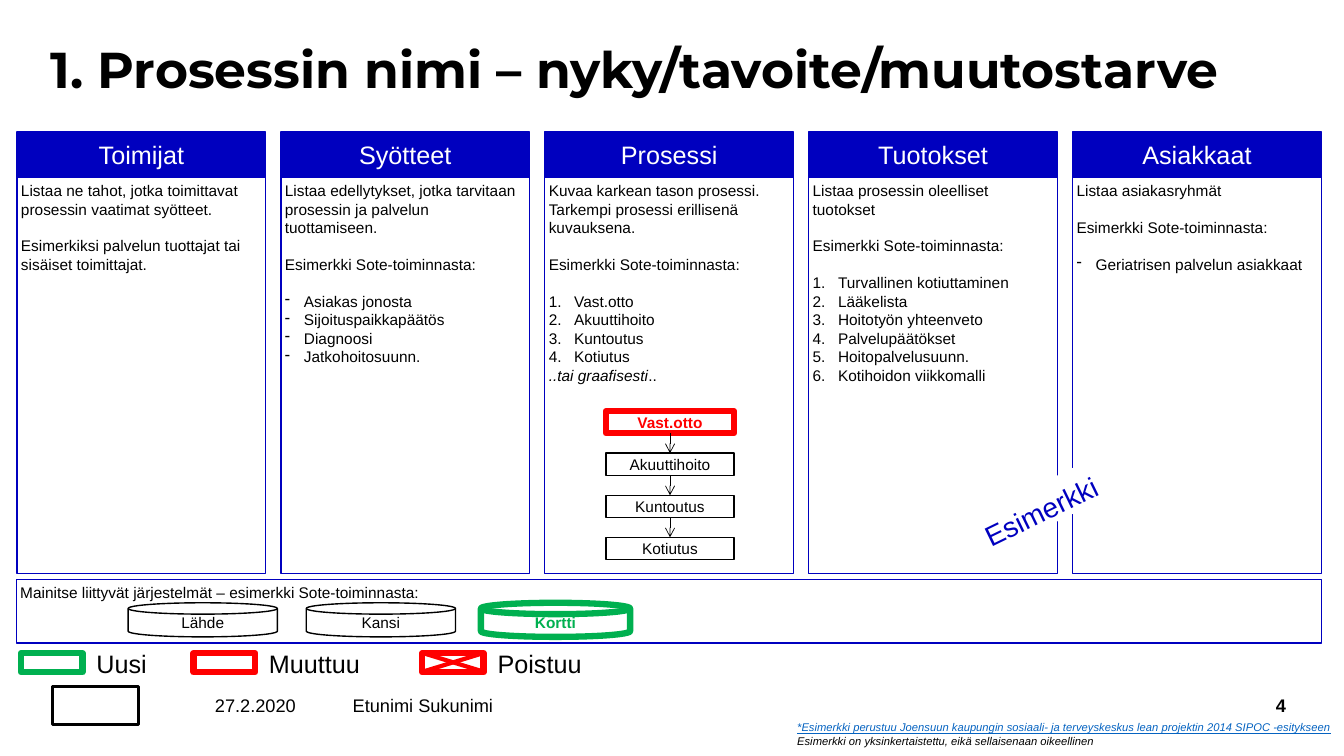
"""Build the SIPOC process description slide."""
from lxml import etree
from pptx import Presentation
from pptx.dml.color import RGBColor
from pptx.enum.shapes import MSO_CONNECTOR, MSO_SHAPE
from pptx.enum.text import MSO_ANCHOR, PP_ALIGN
from pptx.oxml.ns import qn
from pptx.util import Cm, Pt

RECTANGLE, DISK = MSO_SHAPE.RECTANGLE, MSO_SHAPE.FLOWCHART_MAGNETIC_DISK
STRAIGHT = MSO_CONNECTOR.STRAIGHT
TOP, MIDDLE = MSO_ANCHOR.TOP, MSO_ANCHOR.MIDDLE
LEFT, CENTER, RIGHT = PP_ALIGN.LEFT, PP_ALIGN.CENTER, PP_ALIGN.RIGHT

BLACK = RGBColor(0x00, 0x00, 0x00)
WHITE = RGBColor(0xFF, 0xFF, 0xFF)
BLUE = RGBColor(0x00, 0x00, 0xBF)
GREEN = RGBColor(0x00, 0xB0, 0x50)
RED = RGBColor(0xFF, 0x00, 0x00)
LINK_BLUE = RGBColor(0x05, 0x63, 0xC1)

COLUMNS = [
    ("Toimijat", [
        ("plain", "Listaa ne tahot, jotka toimittavat prosessin vaatimat syötteet."),
        ("gap", "Esimerkiksi palvelun tuottajat tai sisäiset toimittajat."),
    ]),
    ("Syötteet", [
        ("plain", "Listaa edellytykset, jotka tarvitaan prosessin ja palvelun tuottamiseen."),
        ("gap", "Esimerkki Sote-toiminnasta:"),
        ("gap dash", "Asiakas jonosta"),
        ("dash", "Sijoituspaikkapäätös"),
        ("dash", "Diagnoosi"),
        ("dash", "Jatkohoitosuunn."),
    ]),
    ("Prosessi", [
        ("plain", "Kuvaa karkean tason prosessi. Tarkempi prosessi erillisenä kuvauksena."),
        ("gap", "Esimerkki Sote-toiminnasta:"),
        ("gap number", "Vast.otto"),
        ("number", "Akuuttihoito"),
        ("number", "Kuntoutus"),
        ("number", "Kotiutus"),
        ("plain", "..tai graafisesti"),
    ]),
    ("Tuotokset", [
        ("plain", "Listaa prosessin oleelliset tuotokset"),
        ("gap", "Esimerkki Sote-toiminnasta:"),
        ("gap number", "Turvallinen kotiuttaminen"),
        ("number", "Lääkelista"),
        ("number", "Hoitotyön yhteenveto"),
        ("number", "Palvelupäätökset"),
        ("number", "Hoitopalvelusuunn."),
        ("number", "Kotihoidon viikkomalli"),
    ]),
    ("Asiakkaat", [
        ("plain", "Listaa asiakasryhmät"),
        ("gap", "Esimerkki Sote-toiminnasta:"),
        ("gap dash", "Geriatrisen palvelun asiakkaat"),
    ]),
]
BULLETS = {
    "dash": (0.48, "a:buChar", "char", "-"),
    "number": (0.64, "a:buAutoNum", "type", "arabicPeriod"),
}

prs = Presentation()
prs.slide_width, prs.slide_height = Cm(33.87), Cm(19.05)
slide = prs.slides.add_slide(prs.slide_layouts[6])


def add_box(kind, left, top, width, height, fill=WHITE, line=None, weight=1):
    box = slide.shapes.add_shape(kind, Cm(left), Cm(top), Cm(width), Cm(height))
    box.shadow.inherit = False
    box.fill.solid()
    box.fill.fore_color.rgb = fill
    if line is None:
        box.line.fill.background()
    else:
        box.line.color.rgb = line
        box.line.width = Pt(weight)
    return box


def write(box, paragraphs, size=11, color=BLACK, align=LEFT, anchor=TOP,
          inset=0.1, bold=False, italic=False, font="Arial"):
    frame = box.text_frame
    frame.word_wrap = True
    frame.vertical_anchor = anchor
    frame.margin_left = frame.margin_right = Cm(inset)
    frame.margin_top = frame.margin_bottom = Cm(inset)
    for number, (style, text) in enumerate(paragraphs):
        paragraph = frame.add_paragraph() if number else frame.paragraphs[0]
        paragraph.text = text
        paragraph.alignment = align
        for word in style.split():
            if word == "gap":
                paragraph.space_before = Pt(13)
            elif word in BULLETS:
                indent, tag, key, value = BULLETS[word]
                properties = paragraph._p.get_or_add_pPr()
                properties.set("marL", str(Cm(indent)))
                properties.set("indent", str(-Cm(indent)))
                etree.SubElement(properties, qn(tag)).set(key, value)
        paragraph.font.name = font
        paragraph.font.size = Pt(size)
        paragraph.font.color.rgb = color
        paragraph.font.bold = bold
        paragraph.font.italic = italic
    return frame.paragraphs[-1]


title = slide.shapes.add_textbox(Cm(1.27), Cm(1.14), Cm(31.22), Cm(2.18))
write(title, [("plain", "1. Prosessin nimi – nyky/tavoite/muutostarve")], 36,
      inset=0, bold=True, font="Montserrat").line_spacing = 0.9

add_box(RECTANGLE, 1.32, 17.3, 2.18, 0.95, line=BLACK, weight=2)
for text, left, width, align, bold in [
    ("27.2.2020", 4.62, 3.63, CENTER, False),
    ("Etunimi Sukunimi", 8.89, 11.43, LEFT, False),
    ("4", 28.98, 3.43, RIGHT, True),
]:
    footer = slide.shapes.add_textbox(Cm(left), Cm(17.42), Cm(width), Cm(0.71))
    write(footer, [("plain", text)], 13, align=align, anchor=MIDDLE, inset=0, bold=bold)

for number, (heading, paragraphs) in enumerate(COLUMNS):
    left = 0.43 + 6.65 * number
    body = add_box(RECTANGLE, left, 4.47, 6.27, 9.98, line=BLUE)
    last_paragraph = write(body, paragraphs)
    if heading == "Prosessi":
        last_paragraph.runs[0].font.italic = True
        last_paragraph.add_run().text = ".."
    header = add_box(RECTANGLE, left, 3.33, 6.27, 1.14, BLUE, BLUE)
    write(header, [("plain", heading)], 18, WHITE, CENTER, MIDDLE)

systems = add_box(RECTANGLE, 0.41, 14.6, 32.89, 1.6, line=BLUE)
write(systems, [("plain", "Mainitse liittyvät järjestelmät – esimerkki Sote-toiminnasta:")])
for system, left, color, weight in [
    ("Lähde", 3.23, BLACK, 1), ("Kansi", 7.72, BLACK, 1), ("Kortti", 12.12, GREEN, 4.5),
]:
    disk = add_box(DISK, left, 15.19, 3.76, 0.86, line=color, weight=weight)
    write(disk, [("plain", system)], color=color, align=CENTER, anchor=MIDDLE,
          bold=color == GREEN)

previous = None
for number, step in enumerate(["Vast.otto", "Akuuttihoito", "Kuntoutus", "Kotiutus"]):
    color, weight = (BLACK, 1) if number else (RED, 4.5)
    step_box = add_box(RECTANGLE, 15.27, 10.36 + 1.06 * number, 3.23, 0.56,
                       line=color, weight=weight)
    write(step_box, [("plain", step)], color=color, align=CENTER, anchor=MIDDLE,
          bold=color == RED)
    if previous is not None:
        arrow = slide.shapes.add_connector(STRAIGHT, 0, 0, 0, 0)
        arrow.begin_connect(previous, 2)
        arrow.end_connect(step_box, 0)
        arrow.line.color.rgb = BLACK
        arrow.line.width = Pt(0.5)
        etree.SubElement(arrow.line._get_or_add_ln(), qn("a:tailEnd")).set("type", "arrow")
        etree.SubElement(arrow._element.spPr, qn("a:effectLst"))
    previous = step_box

stamp = add_box(RECTANGLE, 24.38, 11.94, 4.95, 1.04)
stamp.rotation = -25.9
write(stamp, [("plain", "Esimerkki")], 20, BLUE, inset=0.2)

for meaning, left, color in [
    ("Uusi", 0.53, GREEN), ("Muuttuu", 4.88, RED), ("Poistuu", 10.64, RED),
]:
    add_box(RECTANGLE, left, 16.46, 1.55, 0.48, line=color, weight=4.5)
    legend = slide.shapes.add_textbox(Cm(left + 1.9), Cm(16.33), Cm(3), Cm(0.71))
    write(legend, [("plain", meaning)], 18, inset=0)

for start, end in [(10.67, 12.17), (12.17, 10.67)]:
    cross = slide.shapes.add_connector(STRAIGHT, Cm(start), Cm(16.92), Cm(end), Cm(16.46))
    cross.line.color.rgb = RED
    cross.line.width = Pt(3)
    etree.SubElement(cross._element.spPr, qn("a:effectLst"))

for text, top, color, underline in [
    ("*Esimerkki perustuu Joensuun kaupungin sosiaali- ja terveyskeskus lean projektin "
     "2014 SIPOC -esitykseen", 18.16, LINK_BLUE, True),
    ("Esimerkki on yksinkertaistettu, eikä sellaisenaan oikeellinen", 18.5, BLACK, False),
]:
    footnote = slide.shapes.add_textbox(Cm(20.09), Cm(top), Cm(13.76), Cm(0.33))
    write(footnote, [("plain", text)], 8, color, inset=0,
          italic=True).font.underline = underline

prs.save("out.pptx")
